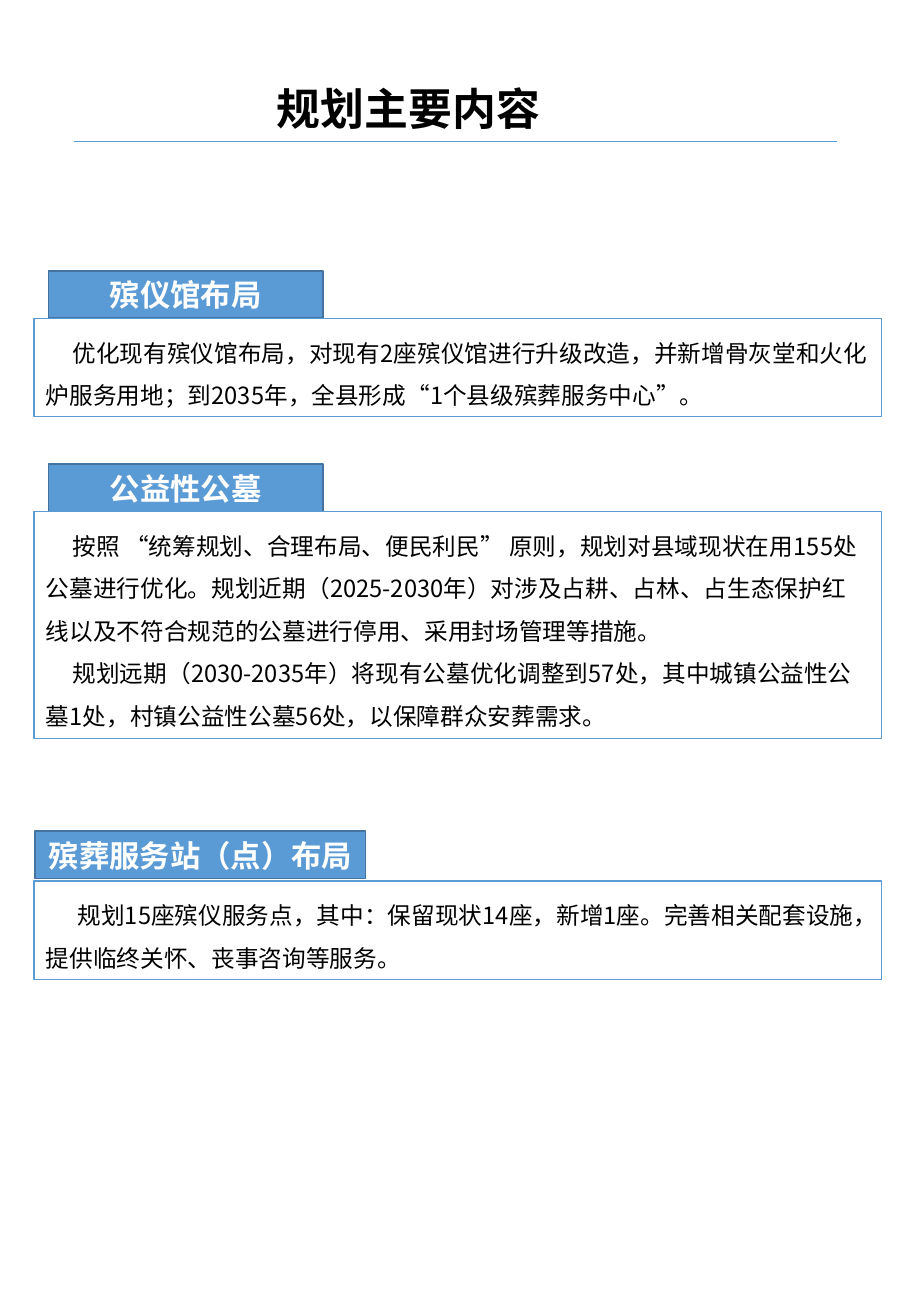
from lxml import etree
from pptx import Presentation
from pptx.dml.color import RGBColor
from pptx.enum.shapes import MSO_CONNECTOR, MSO_SHAPE
from pptx.enum.text import MSO_ANCHOR, MSO_AUTO_SIZE, PP_ALIGN
from pptx.oxml.ns import qn
from pptx.util import Pt

PX = 9144  # 100 px to the inch
FONT = "Noto Sans CJK SC"
COLORS = {"blue": "5B9BD5", "edge": "43739E", "white": "FFFFFF", "black": "000000"}
RECTANGLE, STRAIGHT = MSO_SHAPE.RECTANGLE, MSO_CONNECTOR.STRAIGHT
TOP, MIDDLE = MSO_ANCHOR.TOP, MSO_ANCHOR.MIDDLE
LEFT, CENTER = PP_ALIGN.LEFT, PP_ALIGN.CENTER
FIXED, GROW = MSO_AUTO_SIZE.NONE, MSO_AUTO_SIZE.SHAPE_TO_FIT_TEXT

TAB_HEIGHT = 39
TITLE_FORMAT = {"size": Pt(26), "bold": True, "color": "black"}
TAB_FORMAT = {"size": Pt(18), "bold": True, "color": "white"}
BODY_FORMAT = {"size": Pt(14), "bold": False, "color": "black"}

# box, tab (offset, width), gap under tab, first-line indent, heading, paragraphs
SECTIONS = [
    ((28, 223, 698, 120), (12, 226), 0, 22, "殡仪馆布局", [
        "优化现有殡仪馆布局，对现有2座殡仪馆进行升级改造，并新增骨灰堂和火化炉服务用地；"
        "到2035年，全县形成“1个县级殡葬服务中心”。"]),
    ((28, 382, 698, 226), (12, 226), 0, 22, "公益性公墓", [
        "按照 “统筹规划、合理布局、便民利民” 原则，规划对县域现状在用155处公墓进行优化。"
        "规划近期（2025-2030年）对涉及占耕、占林、占生态保护红线以及不符合规范的公墓"
        "进行停用、采用封场管理等措施。",
        "规划远期（2030-2035年）将现有公墓优化调整到57处，其中城镇公益性公墓1处，"
        "村镇公益性公墓56处，以保障群众安葬需求。"]),
    ((28, 684, 698, 122), (1, 272), 2, 26, "殡葬服务站（点）布局", [
        "规划15座殡仪服务点，其中：保留现状14座，新增1座。"
        "完善相关配套设施，提供临终关怀、丧事咨询等服务。"]),
]


def rgb(name):
    return RGBColor.from_string(COLORS[name])


def write(frame, texts, text_format, align, spacing, indent=0, **frame_format):
    """Fill a text frame with equally formatted paragraphs."""
    for name, value in {"word_wrap": True, **frame_format}.items():
        setattr(frame, name, value)
    for index, text in enumerate(texts):
        para = frame.paragraphs[0] if index == 0 else frame.add_paragraph()
        para.alignment, para.line_spacing = align, spacing
        if indent:
            para._p.get_or_add_pPr().set("indent", str(indent * PX))
        span = para.add_run()
        span.text = text
        for name, value in text_format.items():
            if name == "color":
                span.font.color.rgb = rgb(value)
            else:
                setattr(span.font, name, value)
        span.font.name = FONT
        etree.SubElement(span._r.get_or_add_rPr(), qn("a:ea")).set("typeface", FONT)


def add_rectangle(page, box, fill, line, width):
    shape = page.shapes.add_shape(RECTANGLE, *(n * PX for n in box))
    shape.shadow.inherit = False
    if fill:
        shape.fill.solid()
        shape.fill.fore_color.rgb = rgb(fill)
    else:
        shape.fill.background()
    shape.line.color.rgb = rgb(line)
    shape.line.width = Pt(width)
    return shape


def add_header(page, box):
    """Title with a thin rule below it."""
    left, top, width, height = box
    # Title
    title = page.shapes.title
    title_box = {"left": left + 134, "top": top, "width": 457, "height": height - 4}
    for name, value in title_box.items():
        setattr(title, name, value * PX)
    write(title.text_frame, ["规划主要内容"], TITLE_FORMAT, LEFT, 0.9,
          vertical_anchor=MIDDLE, auto_size=FIXED, margin_left=33 * PX)
    # Rule
    bottom = top + height
    rule = page.shapes.add_connector(
        STRAIGHT, *(n * PX for n in (left, bottom, left + width, bottom)))
    rule.line.color.rgb = rgb("blue")
    rule.line.width = Pt(0.5)
    etree.SubElement(rule._element.spPr, qn("a:effectLst"))


def add_section(page, box, tab, gap, indent, heading, texts):
    """Heading tab standing on a framed text box."""
    left, top, width, height = box
    offset, tab_width = tab
    # Heading tab
    label = add_rectangle(page, (left + offset, top, tab_width, TAB_HEIGHT),
                          "blue", "edge", 1)
    write(label.text_frame, [heading], TAB_FORMAT, CENTER, 1.0,
          vertical_anchor=MIDDLE)
    # Framed text
    used = TAB_HEIGHT + gap
    body = add_rectangle(page, (left, top + used, width, height - used),
                         None, "blue", 0.75)
    write(body.text_frame, texts, BODY_FORMAT, LEFT, 1.5, indent,
          vertical_anchor=TOP, auto_size=GROW)


def main():
    deck = Presentation()
    deck.slide_width, deck.slide_height = 750 * PX, 1083 * PX
    page = deck.slides.add_slide(deck.slide_layouts[5])
    add_header(page, (61, 71, 628, 45))
    for section in SECTIONS:
        add_section(page, *section)
    deck.save("out.pptx")


if __name__ == "__main__":
    main()
